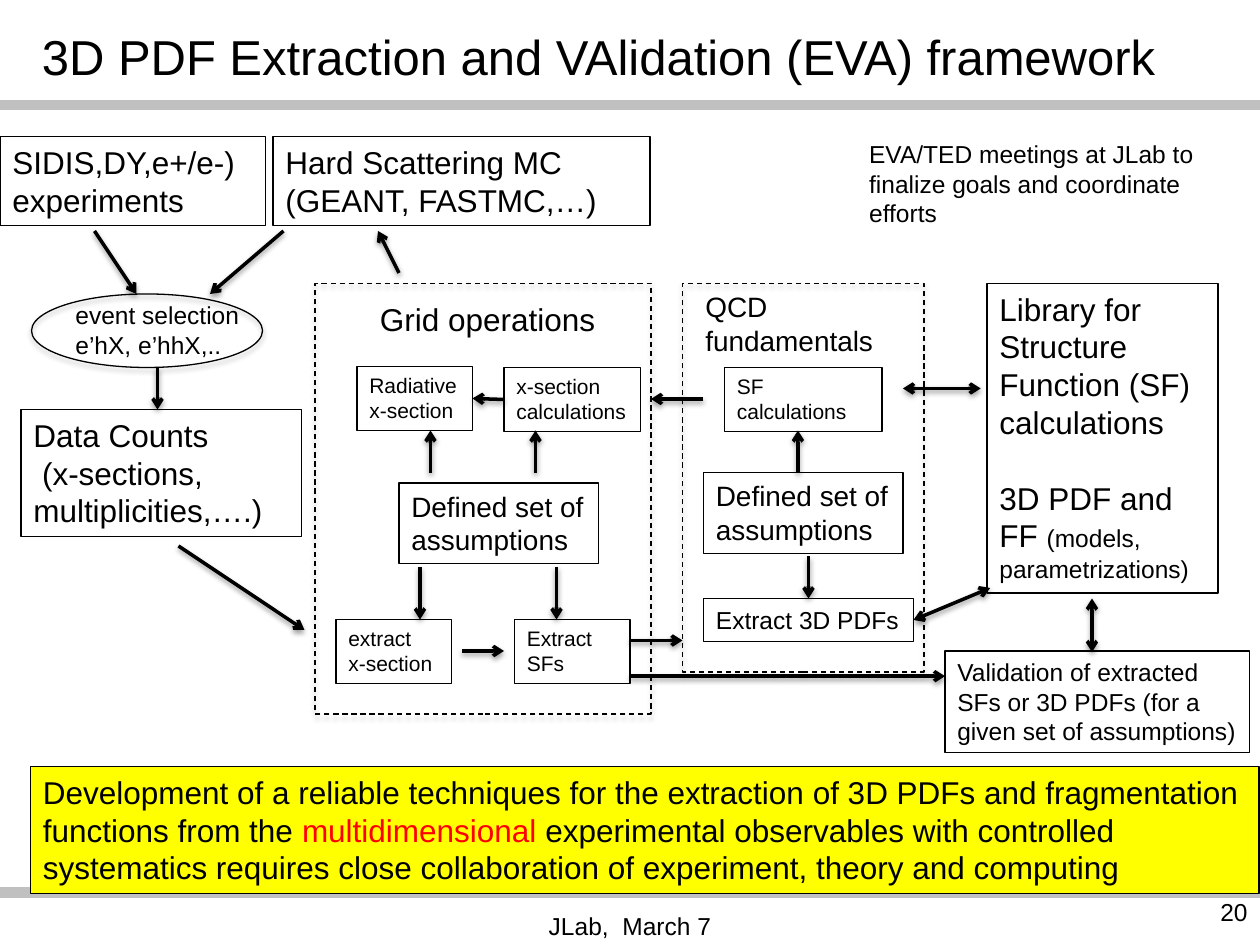
from dataclasses import dataclass

from lxml import etree
from pptx import Presentation
from pptx.dml.color import RGBColor
from pptx.enum.dml import MSO_LINE
from pptx.enum.shapes import MSO_CONNECTOR, MSO_SHAPE
from pptx.enum.text import MSO_ANCHOR, MSO_AUTO_SIZE, PP_ALIGN
from pptx.oxml.ns import qn
from pptx.util import Inches, Pt

RECTANGLE, ELLIPSE = MSO_SHAPE.RECTANGLE, MSO_SHAPE.OVAL
STRAIGHT = MSO_CONNECTOR.STRAIGHT
DASH = MSO_LINE.DASH
LEFT, CENTER, RIGHT = PP_ALIGN.LEFT, PP_ALIGN.CENTER, PP_ALIGN.RIGHT
TOP, MIDDLE = MSO_ANCHOR.TOP, MSO_ANCHOR.MIDDLE
GROW, FIXED = MSO_AUTO_SIZE.SHAPE_TO_FIT_TEXT, MSO_AUTO_SIZE.NONE
TOP_SIDE, LEFT_SIDE, BOTTOM_SIDE, RIGHT_SIDE = range(4)
COLUMNS, ROWS = 120, 90
SLIDE_WIDTH, SLIDE_HEIGHT = Inches(10), Inches(7.5)
BLACK, RED, YELLOW, GREY = "000000", "FF0000", "FFFF00", "C0C0C0"
FONT = "Arial"


@dataclass(frozen=True)
class Run:
    text: str
    size: float | None = None
    color: str = BLACK


@dataclass(frozen=True)
class Label:
    column: float
    row: float
    columns: float
    rows: float
    size: float
    paragraphs: tuple
    align: PP_ALIGN = LEFT
    anchor: MSO_ANCHOR = TOP
    wrap: bool = True
    grow: bool = True


@dataclass(frozen=True)
class Box(Label):
    name: str = ""
    fill: str | None = None


@dataclass(frozen=True)
class Outline:
    kind: MSO_SHAPE
    column: float
    row: float
    columns: float
    rows: float
    dashed: bool = True


@dataclass(frozen=True)
class Arrow:
    start: tuple
    end: tuple
    double: bool = False
    begin_join: tuple | None = None
    end_join: tuple | None = None


LABELS = [
    Label(0, 2.2, 114, 6.3, 28, ("3D PDF Extraction and VAlidation (EVA) framework",),
          CENTER, MIDDLE, grow=False),
    Label(66, 27, 20, 7.7, 16, ("QCD fundamentals",)),
    Label(81.6, 12.7, 38.4, 12.5, 14,
          ("EVA/TED meetings at JLab to finalize goals and coordinate efforts",)),
    Label(35, 28, 23.2, 4.8, 18, ("Grid operations",), wrap=False),
    Label(6, 28, 18.1, 6.8, 14, ("event selection", "e’hX, e’hhX,.."), wrap=False),
    Label(41, 86.2, 38, 3.2, 14, ("JLab,  March 7",), CENTER, grow=False),
    Label(111, 84.8, 9, 4.2, 14, ("20",), RIGHT, grow=False),
]

ASSUMPTIONS = ("Defined set of assumptions",)
BOXES = [
    Box(2.9, 73, 117, 12.1, 18, ((
        Run("Development of a reliable techniques for the extraction of 3D PDFs "
            "and fragmentation functions from the "),
        Run("multidimensional", color=RED),
        Run(" experimental observables with controlled systematics requires close "
            "collaboration of experiment, theory and computing")),), fill=YELLOW),
    Box(0, 13, 25.3, 8.5, 18, ("SIDIS,DY,e+/e-)", "experiments")),
    Box(26, 13, 35.9, 8.5, 18, ("Hard Scattering MC (GEANT, FASTMC,…)",)),
    Box(2, 39, 26.7, 12.1, 18, ("Data Counts", " (x-sections, multiplicities,….)")),
    Box(94, 27, 22, 29.5, 18, (
        "Library for Structure Function (SF) calculations",
        (Run("3D PDF and FF "), Run("(models,", 14)),
        (Run("parametrizations)", 14),)), name="library"),
    Box(34, 34.9, 11, 6.1, 12, ("Radiative", "x-section"), name="radiative"),
    Box(48, 35, 13, 6.1, 12, ("x-section calculations",), name="cross section"),
    Box(69, 35, 15, 6.1, 12, ("SF calculations",)),
    Box(38, 46, 19, 7.7, 16, ASSUMPTIONS),
    Box(67, 45, 19, 7.7, 16, ASSUMPTIONS),
    Box(32, 59, 11, 6.1, 12, ("extract", "x-section")),
    Box(49, 59, 11, 6.1, 12, ("Extract SFs",)),
    Box(67, 57, 20, 4.1, 14, ("Extract 3D PDFs",), name="distributions"),
    Box(90, 62, 29, 9.7, 14,
        ("Validation of extracted SFs or 3D PDFs (for a given set of assumptions)",)),
]
SECTION_GAPS = {"library": {1: 21.6}}

OUTLINES = [
    Outline(RECTANGLE, 30, 27, 32, 41),
    Outline(RECTANGLE, 65, 27, 23, 37),
    Outline(ELLIPSE, 3, 28, 22, 7, dashed=False),
]

ARROWS = [
    Arrow((9, 22), (13, 28)),
    Arrow((27, 22), (20, 28)),
    Arrow((38, 26), (36, 22)),
    Arrow((15, 35), (15, 39)),
    Arrow((17, 52), (29, 60)),
    Arrow((48, 38), (45, 38), begin_join=("cross section", LEFT_SIDE),
          end_join=("radiative", RIGHT_SIDE)),
    Arrow((67, 38), (62, 38)),
    Arrow((41, 45), (41, 41)),
    Arrow((51, 45), (51, 41)),
    Arrow((76, 45), (76, 41)),
    Arrow((40, 54), (40, 59)),
    Arrow((53, 54), (53, 59)),
    Arrow((77, 53), (77, 57), end_join=("distributions", TOP_SIDE)),
    Arrow((44, 62), (48, 62)),
    Arrow((60, 61), (65, 61)),
    Arrow((60, 64.4), (90, 64.4)),
    Arrow((86, 37), (93.4, 37), double=True),
    Arrow((87, 59), (94.3, 56), double=True, begin_join=("distributions", RIGHT_SIDE)),
    Arrow((104, 57), (104, 62.1), double=True),
]


def rgb(color: str) -> RGBColor:
    return RGBColor.from_string(color)


def across(columns: float) -> int:
    return round(SLIDE_WIDTH * columns / COLUMNS)


def down(rows: float) -> int:
    return round(SLIDE_HEIGHT * rows / ROWS)


def frame(item) -> tuple:
    return across(item.column), down(item.row), across(item.columns), down(item.rows)


def set_shadow(shape, opacity: int = 0, distance: float = 0) -> None:
    properties = shape._element.spPr
    effects = properties.find(qn("a:effectLst"))
    if effects is None:
        effects = etree.SubElement(properties, qn("a:effectLst"))
    if opacity:
        shadow = etree.SubElement(effects, qn("a:outerShdw"), blurRad=str(Pt(3.1)),
                                  dist=str(Pt(distance)), dir="5400000", rotWithShape="0")
        color = etree.SubElement(shadow, qn("a:srgbClr"), val=BLACK)
        etree.SubElement(color, qn("a:alpha"), val=str(opacity * 1000))


def write_text(shape, label: Label, gaps: dict) -> None:
    text_frame = shape.text_frame
    text_frame.word_wrap = label.wrap
    text_frame.auto_size = GROW if label.grow else FIXED
    text_frame.vertical_anchor = label.anchor
    for index, content in enumerate(label.paragraphs):
        paragraph = text_frame.add_paragraph() if index else text_frame.paragraphs[0]
        paragraph.alignment = label.align
        if index in gaps:
            paragraph.space_before = Pt(gaps[index])
        for item in (Run(content),) if isinstance(content, str) else content:
            run = paragraph.add_run()
            run.text = item.text
            run.font.name = FONT
            run.font.size = Pt(item.size or label.size)
            run.font.color.rgb = rgb(item.color)


def draw_shape(slide, kind: MSO_SHAPE, item, fill: str | None = None):
    shape = slide.shapes.add_shape(kind, *frame(item))
    shape.shadow.inherit = False
    if fill:
        shape.fill.solid()
        shape.fill.fore_color.rgb = rgb(fill)
    else:
        shape.fill.background()
    shape.line.color.rgb = rgb(BLACK)
    shape.line.width = Pt(0.75)
    return shape


def draw_outline(slide, outline: Outline) -> None:
    shape = draw_shape(slide, outline.kind, outline)
    if outline.dashed:
        shape.line.dash_style = DASH
    set_shadow(shape, 35, 1.8)


def draw_line(slide, start: tuple, end: tuple, color: str, width: float):
    connector = slide.shapes.add_connector(
        STRAIGHT, across(start[0]), down(start[1]), across(end[0]), down(end[1]))
    connector.line.color.rgb = rgb(color)
    connector.line.width = Pt(width)
    return connector


def draw_arrow(slide, arrow: Arrow, boxes: dict) -> None:
    connector = draw_line(slide, arrow.start, arrow.end, BLACK, 2)
    line = connector.line._get_or_add_ln()
    for tag in ("a:headEnd", "a:tailEnd") if arrow.double else ("a:tailEnd",):
        etree.SubElement(line, qn(tag), type="arrow")
    set_shadow(connector, 38, 1.6)
    if arrow.begin_join:
        connector.begin_connect(boxes[arrow.begin_join[0]], arrow.begin_join[1])
    if arrow.end_join:
        connector.end_connect(boxes[arrow.end_join[0]], arrow.end_join[1])


def main() -> None:
    presentation = Presentation()
    presentation.slide_width, presentation.slide_height = SLIDE_WIDTH, SLIDE_HEIGHT
    slide = presentation.slides.add_slide(presentation.slide_layouts[6])
    for row in (10, 85):
        set_shadow(draw_line(slide, (0, row), (COLUMNS, row), GREY, 6))
    boxes = {}
    for box in BOXES:
        shape = draw_shape(slide, RECTANGLE, box, box.fill)
        write_text(shape, box, SECTION_GAPS.get(box.name, {}))
        boxes[box.name] = shape
    for outline in OUTLINES:
        draw_outline(slide, outline)
    for label in LABELS:
        write_text(slide.shapes.add_textbox(*frame(label)), label, {})
    for arrow in ARROWS:
        draw_arrow(slide, arrow, boxes)
    presentation.save("out.pptx")


if __name__ == "__main__":
    main()
